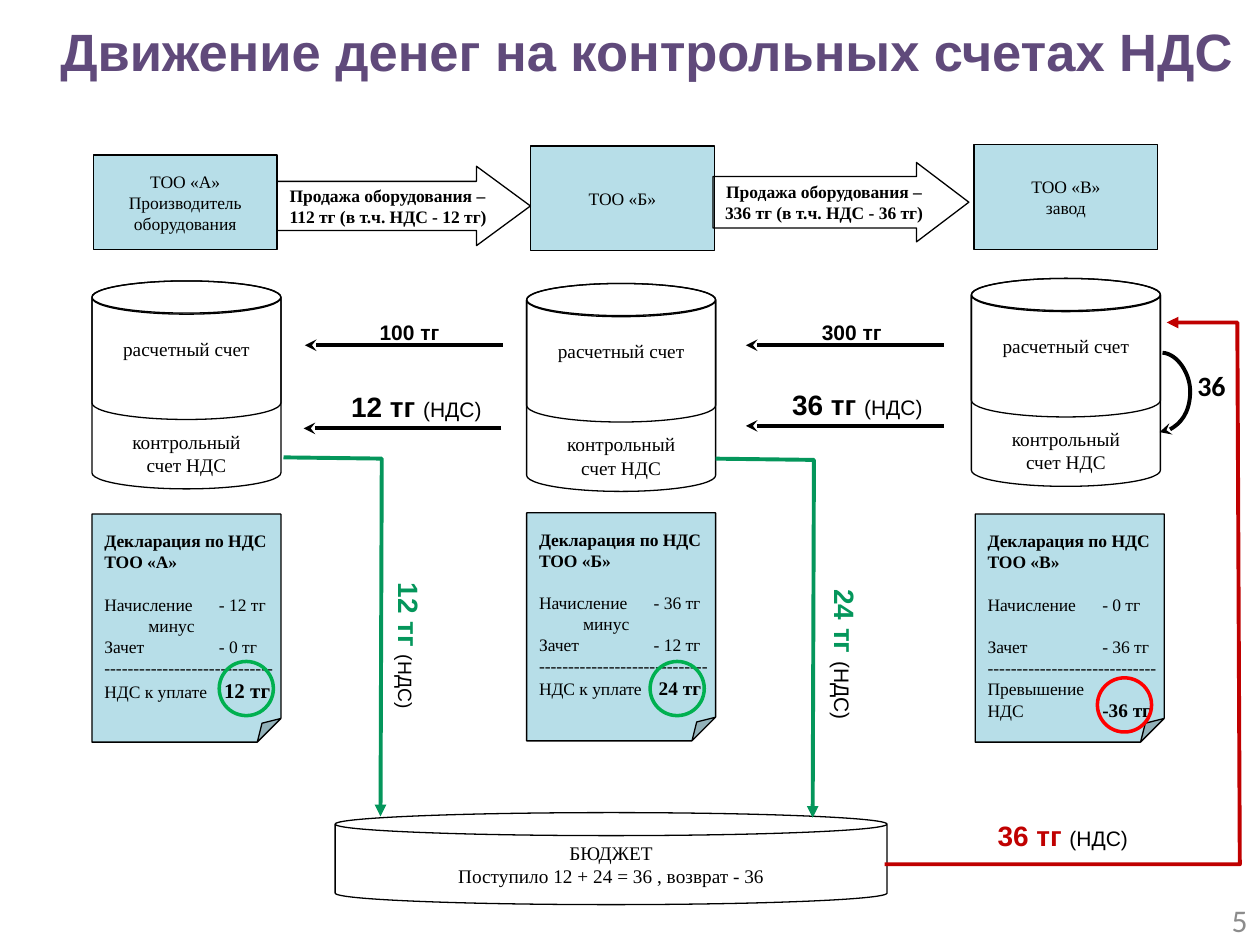
from lxml import etree
from pptx import Presentation
from pptx.dml.color import RGBColor
from pptx.enum import shapes as sh, text as tx
from pptx.oxml.ns import qn
from pptx.util import Inches, Pt

BLACK, GREEN, RED = "000000", "04965B", "C00000"
PALE_BLUE = "B7DEE8"
SERIF, SANS = "Times New Roman", "Arial"
CENTER, LEFT = tx.PP_ALIGN.CENTER, tx.PP_ALIGN.LEFT
SHAPE = sh.MSO_SHAPE
DASHES = "-" * 29


def rgb(hex_color):
    return RGBColor.from_string(hex_color)


def set_font(font, size, name=SERIF, color=BLACK, bold=False):
    font.size, font.name, font.bold = Pt(size), name, bold
    font.color.rgb = rgb(color)


def set_line(shape, color=BLACK, width=0.75, head=None):
    """Style the outline; head names the arrowhead at its far end."""
    shape.line.color.rgb = rgb(color)
    shape.line.width = Pt(width)
    if head:
        etree.SubElement(shape.line._get_or_add_ln(), qn("a:tailEnd"), type=head)


def set_guides(shape, **guides):
    """Write adjustment values, given as fractions, into the preset geometry."""
    geometry = shape._element.spPr.find(qn("a:prstGeom"))
    for old_list in geometry.findall(qn("a:avLst")):
        geometry.remove(old_list)
    guide_list = etree.SubElement(geometry, qn("a:avLst"))
    for name, value in guides.items():
        etree.SubElement(guide_list, qn("a:gd"), name=name,
                         fmla=f"val {round(value * 100000)}")


def add_figure(slide, kind, box, fill=None, color=BLACK, width=0.75, **guides):
    figure = slide.shapes.add_shape(kind, *map(Inches, box))
    figure.shadow.inherit = False
    if guides:
        set_guides(figure, **guides)
    if fill:
        figure.fill.solid()
        figure.fill.fore_color.rgb = rgb(fill)
    else:
        figure.fill.background()
    set_line(figure, color, width)
    return figure


def write_lines(figure, lines, size, align=CENTER, bold=False):
    frame = figure.text_frame
    frame.word_wrap = False
    frame.vertical_anchor = tx.MSO_ANCHOR.MIDDLE
    for index, line in enumerate(lines):
        paragraph = frame.paragraphs[0] if index == 0 else frame.add_paragraph()
        paragraph.text = line
        paragraph.alignment = align
        set_font(paragraph.font, size, bold=bold)
    return frame


def pin_to_top(frame, top, right=0.1):
    frame.vertical_anchor = tx.MSO_ANCHOR.TOP
    frame.margin_top, frame.margin_right = Inches(top), Inches(right)


def add_accounts(slide, left, top):
    """Cylinder with the settlement account above the VAT control account."""
    add_figure(slide, SHAPE.CAN, (left, top, 1.5, 1.1), adj=0.24)
    cylinder = add_figure(slide, SHAPE.CAN, (left, top, 1.5, 1.65), adj=0.17)
    frame = write_lines(cylinder, ["расчетный счет", "контрольный", "счет НДС"], 11)
    pin_to_top(frame, 0.19)
    frame.paragraphs[1].space_before = Pt(40)


def add_tab_stop(paragraph, position):
    tabs = etree.SubElement(paragraph._p.get_or_add_pPr(), qn("a:tabLst"))
    etree.SubElement(tabs, qn("a:tab"), pos=str(Inches(position)), algn="l")


def add_declaration(slide, left, top, company, rows, total, ring):
    """Folded sheet; rows are (text, tab stop, space before in points)."""
    sheet = add_figure(slide, SHAPE.FOLDED_CORNER, (left, top, 1.5, 1.81),
                       PALE_BLUE, adj=0.125)
    heading = ["Декларация по НДС", company]
    frame = write_lines(sheet, heading + [row[0] for row in rows], 10, LEFT)
    frame.word_wrap = True
    pin_to_top(frame, 0.13, right=0)
    for paragraph in frame.paragraphs[:2]:
        paragraph.font.bold = True
    for paragraph, (_, tab, gap) in zip(frame.paragraphs[2:], rows):
        paragraph.space_before = Pt(gap)
        if tab:
            add_tab_stop(paragraph, tab)
    amount, size = total
    run = frame.paragraphs[-1].add_run()
    run.text = amount
    set_font(run.font, size, bold=True)
    x, y, color = ring
    add_figure(slide, SHAPE.OVAL, (x, y, 0.43, 0.43), color=color, width=2)


def add_label(slide, box, parts, font=SANS, rotation=0):
    """Unwrapped label; parts are (text, size, color, bold)."""
    label = slide.shapes.add_textbox(*map(Inches, box))
    label.rotation = rotation
    frame = label.text_frame
    frame.word_wrap = False
    frame.auto_size = tx.MSO_AUTO_SIZE.SHAPE_TO_FIT_TEXT
    paragraph = frame.paragraphs[0]
    paragraph.alignment = CENTER
    for words, size, color, bold in parts:
        run = paragraph.add_run()
        run.text = words
        set_font(run.font, size, font, color, bold)


def add_vat_label(slide, box, amount, color=BLACK, note_size=12, rotation=0):
    add_label(slide, box, [(amount + " ", 16, color, True),
                           ("(НДС)", note_size, BLACK, False)], rotation=rotation)


def add_arrow(slide, start, end, kind=sh.MSO_CONNECTOR.STRAIGHT):
    arrow = slide.shapes.add_connector(kind, *map(Inches, start + end))
    set_line(arrow, width=2.25, head="stealth")
    etree.SubElement(arrow._element.spPr, qn("a:effectLst"))
    return arrow


def add_inner_transfer(slide):
    """Curved arrow from the settlement account to the control account."""
    arc = add_arrow(slide, (9.21, 2.8), (9.22, 3.43), sh.MSO_CONNECTOR.CURVE)
    arc._element.spPr.find(qn("a:xfrm")).set("rot", str(3 * 60000))
    set_guides(arc, adj1=24)


def add_route(slide, points, color):
    start, *others = [tuple(map(Inches, point)) for point in points]
    builder = slide.shapes.build_freeform(*start)
    builder.add_line_segments(others, close=False)
    route = builder.convert_to_shape()
    route.shadow.inherit = False
    route.fill.background()
    set_line(route, color, 2.25, "triangle")


def add_title(slide):
    title = slide.shapes.title
    title.left, title.top, title.width, title.height = map(
        Inches, (0.33, 0.05, 9.61, 0.71))
    title.text_frame.text = "Движение денег на контрольных счетах НДС"
    title.text_frame.vertical_anchor = tx.MSO_ANCHOR.MIDDLE
    paragraph = title.text_frame.paragraphs[0]
    paragraph.alignment = CENTER
    set_font(paragraph.font, 30, SANS, "604A7B", True)


def add_page_number(slide):
    number = slide.shapes.add_textbox(*map(Inches, (7.67, 7.1, 2.33, 0.4)))
    frame = number.text_frame
    frame.word_wrap = True
    frame.vertical_anchor = tx.MSO_ANCHOR.MIDDLE
    frame.text = "5"
    frame.paragraphs[0].alignment = tx.PP_ALIGN.RIGHT
    set_font(frame.paragraphs[0].font, 18, "Calibri", "8C8C8C")


def payable_rows(charge, credit):
    return [(f"Начисление\t- {charge} тг", 0.91, 12), ("\tминус", 0.35, 0),
            (f"Зачет\t- {credit} тг", 0.91, 0), (DASHES, None, 0),
            ("НДС к уплате\t", 0.95, 0)]


def main():
    deck = Presentation()
    deck.slide_width, deck.slide_height = Inches(10), Inches(7.5)
    slide = deck.slides.add_slide(deck.slide_layouts[5])
    add_title(slide)
    for box, lines in [
            ((0.74, 1.23, 1.46, 0.75), ["ТОО «А»", "Производитель", "оборудования"]),
            ((4.21, 1.16, 1.46, 0.83), ["ТОО «Б»"]),
            ((7.73, 1.15, 1.46, 0.83), ["ТОО «В»", "завод"])]:
        write_lines(add_figure(slide, SHAPE.RECTANGLE, box, PALE_BLUE), lines, 10)
    for box, shaft, tip, price, align in [
            ((2.2, 1.32, 2.01, 0.63), 0.62, 0.68, "112 тг (в т.ч. НДС - 12 тг)", LEFT),
            ((5.66, 1.29, 2.03, 0.63), 0.65, 0.66, "336 тг (в т.ч. НДС - 36 тг)", CENTER)]:
        sale = add_figure(slide, SHAPE.RIGHT_ARROW, box, adj1=shaft, adj2=tip)
        write_lines(sale, ["Продажа оборудования –", price], 10, align, True)
    for left, top in [(0.73, 2.23), (4.18, 2.25), (7.71, 2.21)]:
        add_accounts(slide, left, top)

    add_declaration(slide, 0.73, 4.08, "ТОО «А»", payable_rows(12, 0),
                    ("12 тг", 12), (1.74, 5.25, "00B050"))
    add_declaration(slide, 4.18, 4.07, "ТОО «Б»", payable_rows(36, 12),
                    ("24 тг", 11), (5.16, 5.25, "00B050"))
    refund_rows = [("Начисление\t- 0 тг", 0.91, 12), ("Зачет\t- 36 тг", 0.91, 12),
                   (DASHES, None, 0), ("Превышение", None, 0), ("НДС\t", 0.91, 0)]
    add_declaration(slide, 7.74, 4.08, "ТОО «В»", refund_rows,
                    ("-36 тг", 11), (8.71, 5.38, "FF0000"))
    budget = add_figure(slide, SHAPE.CAN, (2.66, 6.45, 4.38, 0.73), adj=0.25)
    write_lines(budget, ["БЮДЖЕТ", "Поступило 12 + 24 = 36 , возврат - 36"], 11)

    for right, y in [(7.49, 2.74), (7.49, 3.38), (3.99, 2.74), (3.98, 3.4)]:
        add_arrow(slide, (right, y), (right - 1.57, y))
    add_inner_transfer(slide)
    add_route(slide, [(7.02, 6.86), (9.84, 6.86), (9.82, 2.56), (9.26, 2.56)], RED)
    for x, y in [(5.68, 3.64), (2.25, 3.63)]:
        add_route(slide, [(x, y), (x + 0.78, y + 0.01), (x + 0.77, y + 2.85)], GREEN)

    for left, amount in [(2.91, "100 тг"), (6.42, "300 тг")]:
        add_label(slide, (left, 2.49, 0.68, 0.3), [(amount, 12, BLACK, True)])
    add_label(slide, (9.4, 2.88, 0.43, 0.37), [("36", 16, BLACK, True)], "Calibri")
    add_vat_label(slide, (2.68, 3.04, 1.25, 0.37), "12 тг")
    add_vat_label(slide, (6.18, 3.03, 1.25, 0.37), "36 тг")
    add_vat_label(slide, (2.64, 4.94, 1.21, 0.37), "12 тг", GREEN, 11, 90)
    add_vat_label(slide, (6.08, 5.01, 1.25, 0.37), "24 тг", GREEN, rotation=90)
    add_vat_label(slide, (7.81, 6.45, 1.25, 0.37), "36 тг", RED)
    add_page_number(slide)
    deck.save("out.pptx")


if __name__ == "__main__":
    main()
